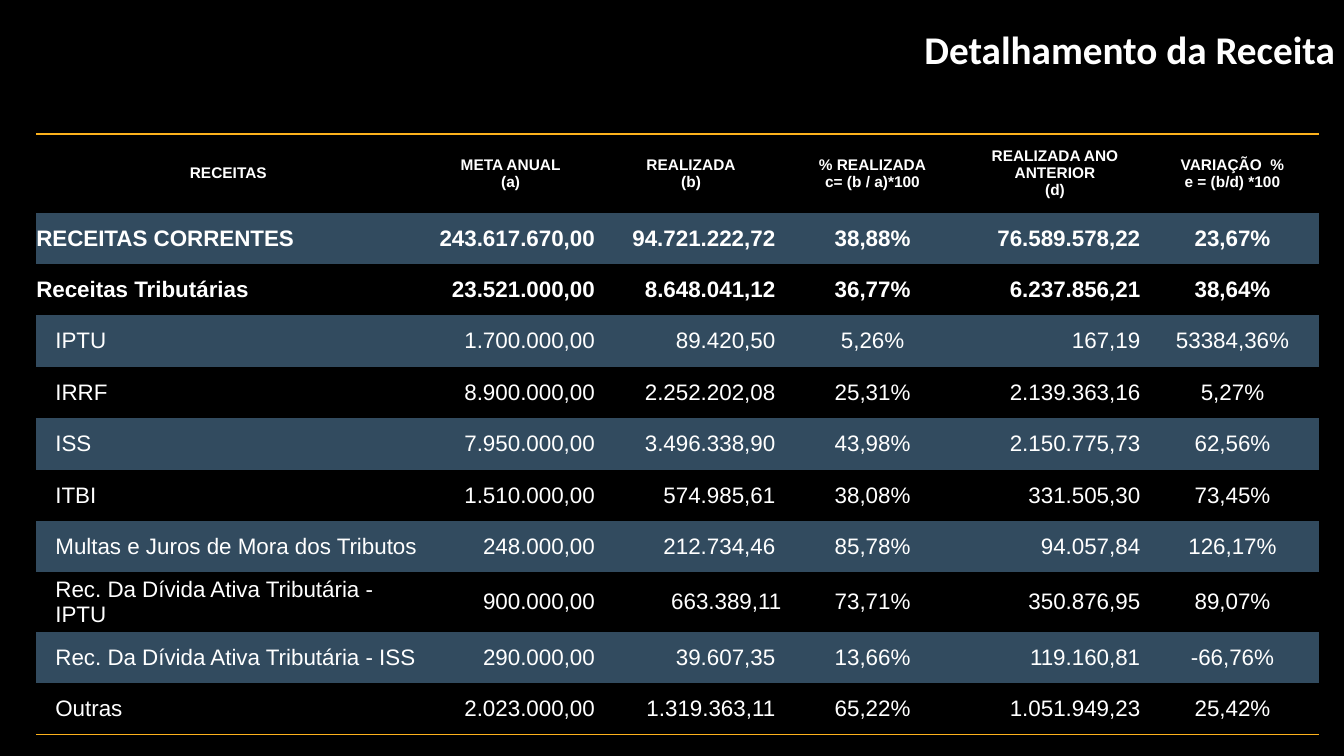
import pptx
import pptx.util
import pptx.dml.color
import pptx.enum.text
import pptx.oxml

TITLE = "Detalhamento da Receita"
HEADS = [
    ["RECEITAS"],
    ["META ANUAL", "(a)"],
    ["REALIZADA", "(b)"],
    ["% REALIZADA", "c= (b / a)*100"],
    ["REALIZADA ANO ANTERIOR", "(d)"],
    ["VARIAÇÃO  %", "e = (b/d) *100"],
]
ROWS = [
    ("RECEITAS CORRENTES", "243.617.670,00", "94.721.222,72", "38,88%", "76.589.578,22", "23,67%"),
    ("Receitas Tributárias", "23.521.000,00", "8.648.041,12", "36,77%", "6.237.856,21", "38,64%"),
    ("IPTU", "1.700.000,00", "89.420,50", "5,26%", "167,19", "53384,36%"),
    ("IRRF", "8.900.000,00", "2.252.202,08", "25,31%", "2.139.363,16", "5,27%"),
    ("ISS", "7.950.000,00", "3.496.338,90", "43,98%", "2.150.775,73", "62,56%"),
    ("ITBI", "1.510.000,00", "574.985,61", "38,08%", "331.505,30", "73,45%"),
    ("Multas e Juros de Mora dos Tributos", "248.000,00", "212.734,46", "85,78%", "94.057,84", "126,17%"),
    ("Rec. Da Dívida Ativa Tributária - IPTU", "900.000,00", "663.389,11", "73,71%", "350.876,95", "89,07%"),
    ("Rec. Da Dívida Ativa Tributária - ISS", "290.000,00", "39.607,35", "13,66%", "119.160,81", "-66,76%"),
    ("Outras", "2.023.000,00", "1.319.363,11", "65,22%", "1.051.949,23", "25,42%"),
]
COLS = [3.81, 1.79, 1.79, 1.81, 1.81, 1.71]
HEAD, STEP, TALL = 0.78, 0.51, 0.59
TOTALS = 2
WRAPPED = 8
FLUSH = (8, 2)
WHITE, BLACK, BAND, GOLD = "FFFFFF", "000000", "324B5F", "FCB11C"
BARE = "{2D5ABB26-0587-4C30-8999-92F81FD0307C}"

inch = pptx.util.Inches
ALIGN = pptx.enum.text.PP_ALIGN
MIDDLE = pptx.enum.text.MSO_ANCHOR.MIDDLE
SIDES = [ALIGN.LEFT, ALIGN.RIGHT, ALIGN.RIGHT, ALIGN.CENTER, ALIGN.RIGHT, ALIGN.CENTER]


def color(code):
    return pptx.dml.color.RGBColor.from_string(code)


def write(frame, lines, size, face, bold, side):
    for n, line in enumerate(lines):
        para = frame.paragraphs[0] if n == 0 else frame.add_paragraph()
        para.alignment = side
        run = para.add_run()
        run.text = line
        font = run.font
        font.size, font.name, font.bold = pptx.util.Pt(size), face, bold
        font.color.rgb = color(WHITE)


def rule(cell, tag):
    space = "http://schemas.openxmlformats.org/drawingml/2006/main"
    line = pptx.oxml.parse_xml(
        f'<a:{tag} xmlns:a="{space}" w="12700"><a:solidFill>'
        f'<a:srgbClr val="{GOLD}"/></a:solidFill></a:{tag}>')
    cell._tc.get_or_add_tcPr().insert(0, line)


def add_title(slide):
    title = slide.shapes.title
    title.left, title.top = inch(4.91), inch(0.2)
    title.width, title.height = inch(8.43), inch(0.57)
    title.text_frame.vertical_anchor = MIDDLE
    write(title.text_frame, [TITLE], 28, "Calibri", True, ALIGN.RIGHT)


def fill_cell(cell, row, col):
    cell.margin_left = cell.margin_right = cell.margin_top = cell.margin_bottom = 0
    cell.vertical_anchor = MIDDLE
    if row % 2:
        cell.fill.solid()
        cell.fill.fore_color.rgb = color(BAND)
    else:
        cell.fill.background()
    if row == 0:
        write(cell.text_frame, HEADS[col], 11, "Arial", True, ALIGN.CENTER)
        rule(cell, "lnT")
        return
    if col == 0 and row > TOTALS:
        cell.margin_left = inch(0.19)
    if SIDES[col] == ALIGN.RIGHT and (row, col) != FLUSH:
        cell.margin_right = inch(0.06)
    write(cell.text_frame, [ROWS[row - 1][col]], 16, "Arial", row <= TOTALS, SIDES[col])
    if row == len(ROWS):
        rule(cell, "lnB")


def add_grid(slide):
    highs = [HEAD] + [STEP] * len(ROWS)
    highs[WRAPPED] = TALL
    frame = slide.shapes.add_table(
        len(highs), len(COLS), inch(0.36), inch(1.33), inch(sum(COLS)), inch(sum(highs)))
    table = frame.table
    table.first_row = table.horz_banding = False
    table._tbl.tblPr[0].text = BARE
    for col, wide in enumerate(COLS):
        table.columns[col].width = inch(wide)
    for row, high in enumerate(highs):
        table.rows[row].height = inch(high)
        for col in range(len(COLS)):
            fill_cell(table.cell(row, col), row, col)


def main():
    deck = pptx.Presentation()
    deck.slide_width, deck.slide_height = inch(13.33), inch(7.5)
    slide = deck.slides.add_slide(deck.slide_layouts[5])
    slide.background.fill.solid()
    slide.background.fill.fore_color.rgb = color(BLACK)
    add_title(slide)
    add_grid(slide)
    deck.save("out.pptx")


if __name__ == "__main__":
    main()
